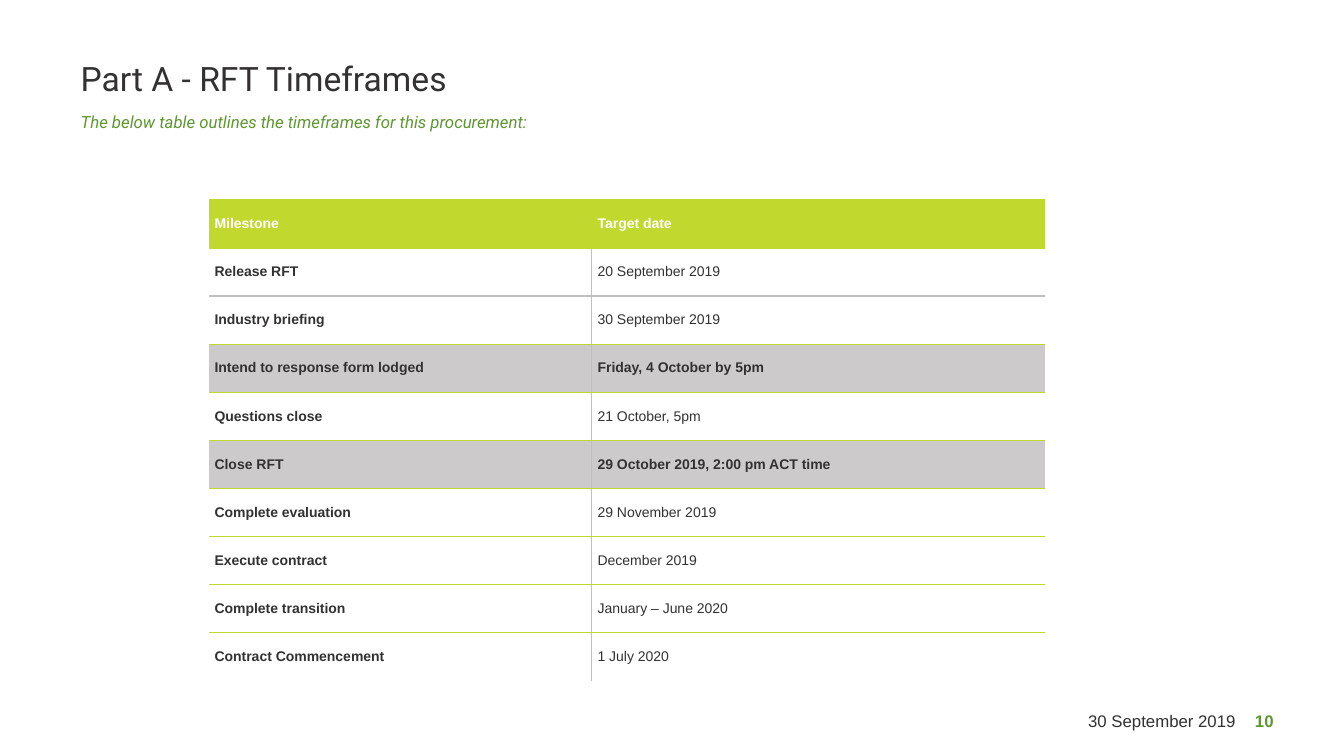
from lxml.etree import SubElement
from pptx import Presentation
from pptx.dml.color import RGBColor
from pptx.enum.text import MSO_ANCHOR as Anchor, PP_ALIGN as Align
from pptx.oxml.ns import qn
from pptx.util import Pt

LIME = RGBColor(0xC1, 0xD8, 0x2F)
GREEN = RGBColor(0x5E, 0x97, 0x32)
DARK = RGBColor(0x33, 0x31, 0x32)
GREY = RGBColor(0xCC, 0xCA, 0xCB)
LINE_GREY = RGBColor(0xBF, 0xBF, 0xBF)
WHITE = RGBColor(0xFF, 0xFF, 0xFF)

MILESTONES = [
    ("Milestone", "Target date"),
    ("Release RFT", "20 September 2019"),
    ("Industry briefing", "30 September 2019"),
    ("Intend to response form lodged", "Friday, 4 October by 5pm"),
    ("Questions close", "21 October, 5pm"),
    ("Close RFT", "29 October 2019, 2:00 pm ACT time"),
    ("Complete evaluation", "29 November 2019"),
    ("Execute contract", "December 2019"),
    ("Complete transition", "January – June 2020"),
    ("Contract Commencement", "1 July 2020"),
]
KEY_ROWS = (3, 5)
COLUMN_WIDTHS = (273.6, 324)
ROW_HEIGHT = 34.35


def place(shape, left, top, width, height):
    shape.left, shape.top = Pt(left), Pt(top)
    shape.width, shape.height = Pt(width), Pt(height)


def write(text_frame, text, size, color, font="Arial", bold=False,
          italic=False, align=Align.LEFT):
    text_frame.text = text
    paragraph = text_frame.paragraphs[0]
    paragraph.alignment = align
    run_font = paragraph.runs[0].font
    run_font.name, run_font.size = font, Pt(size)
    run_font.bold, run_font.italic = bold, italic
    run_font.color.rgb = color


def set_frame(text_frame, anchor, right=0):
    text_frame.word_wrap = True
    text_frame.vertical_anchor = anchor
    text_frame.margin_left = text_frame.margin_top = text_frame.margin_bottom = 0
    text_frame.margin_right = Pt(right)


def add_title(slide, text):
    title = slide.shapes.title
    place(title, 57.6, 29.5, 688.3, 41)
    set_frame(title.text_frame, Anchor.BOTTOM)
    write(title.text_frame, text, 24, DARK, "Roboto")
    title.text_frame.paragraphs[0].line_spacing = 0.9


def add_text(slide, box, text, color, anchor=Anchor.TOP, right=0, **style):
    shape = slide.shapes.add_textbox(*map(Pt, box))
    set_frame(shape.text_frame, anchor, right)
    write(shape.text_frame, text, 12, color, **style)


def set_borders(cell, **colors):
    """Draw the named sides (L, R, T, B) and clear the others."""
    properties = cell._tc.get_or_add_tcPr()
    for side in "LRTB":
        line = SubElement(properties, qn("a:ln" + side), w=str(Pt(1)))
        if side in colors:
            fill = SubElement(line, qn("a:solidFill"))
            SubElement(fill, qn("a:srgbClr"), val=str(colors[side]))
        else:
            SubElement(line, qn("a:noFill"))


def cell_borders(row, column):
    """Lime rules between rows, with grey inner lines below the header."""
    last = len(MILESTONES) - 1
    borders = {"R" if column == 0 else "L": LINE_GREY if row else LIME}
    if row == 0 or column == 1 and row == 0:
        borders["T"] = LIME
    else:
        borders["T"] = LINE_GREY if row == 2 else LIME
    if row < last:
        borders["B"] = LINE_GREY if row == 1 else LIME
    return borders


def fill_cell(cell, text, row, column):
    cell.margin_left = cell.margin_right = Pt(4.3)
    cell.margin_top = cell.margin_bottom = Pt(4.3)
    cell.vertical_anchor = Anchor.MIDDLE
    bold = row == 0 or column == 0 or row in KEY_ROWS
    write(cell.text_frame, text, 10, DARK if row else WHITE, bold=bold)
    set_borders(cell, **cell_borders(row, column))
    if row == 0 or row in KEY_ROWS:
        cell.fill.solid()
        cell.fill.fore_color.rgb = GREY if row else LIME
    else:
        cell.fill.background()


def add_timeframes(slide):
    frame = slide.shapes.add_table(
        len(MILESTONES), len(COLUMN_WIDTHS), Pt(149), Pt(142.8),
        Pt(sum(COLUMN_WIDTHS)), Pt(ROW_HEIGHT * len(MILESTONES)))
    table = frame.table
    table.horz_banding = False
    for column, width in zip(table.columns, COLUMN_WIDTHS):
        column.width = Pt(width)
    for row, texts in enumerate(MILESTONES):
        table.rows[row].height = Pt(ROW_HEIGHT)
        for column, text in enumerate(texts):
            fill_cell(table.cell(row, column), text, row, column)


def main():
    presentation = Presentation()
    presentation.slide_width, presentation.slide_height = Pt(960), Pt(540)
    slide = presentation.slides.add_slide(presentation.slide_layouts[5])

    # Heading
    add_title(slide, "Part A - RFT Timeframes")
    add_text(slide, (57.6, 80, 688.3, 41),
             "The below table outlines the timeframes for this procurement:",
             GREEN, font="Roboto", italic=True)

    # Milestone table
    add_timeframes(slide)

    # Footer
    add_text(slide, (672.5, 500.4, 216, 28.8), "30 September 2019", DARK,
             Anchor.MIDDLE, right=5.8, align=Align.RIGHT)
    add_text(slide, (896.4, 507.6, 37.4, 14.4), "10", GREEN, bold=True)

    presentation.save("out.pptx")


if __name__ == "__main__":
    main()
